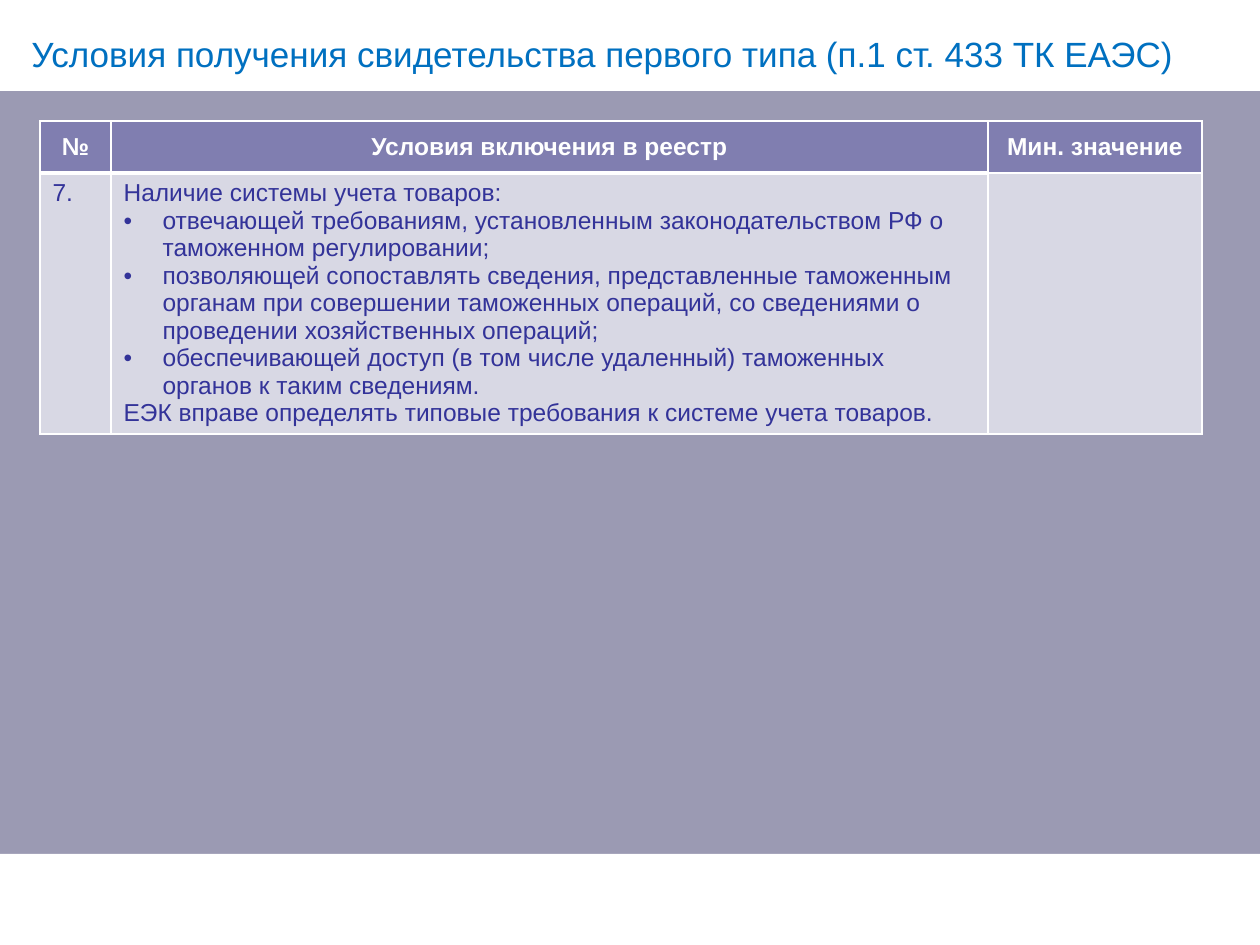
from lxml import etree
from pptx import Presentation
from pptx import util as u
from pptx.dml.color import RGBColor
from pptx.enum import shapes, text
from pptx.oxml import ns

PX = 914400 // 126
SLIDE_W, SLIDE_H = 1260, 945
BAND_H = 91
FONT = "Arial"
WHITE, BACKDROP, TITLE_BLUE = "FFFFFF", "9B9AB3", "0070C0"
HEADER_FILL, BODY_FILL, BODY_INK = "807EB0", "D8D8E4", "333399"

COLUMNS = [71, 877, 214]
ROWS = [52, 261]
HEADINGS = ["№", "Условия включения в реестр", "Мин. значение"]
INTRO = "Наличие системы учета товаров:"
REQUIREMENTS = [
    "отвечающей требованиям, установленным законодательством РФ о таможенном регулировании;",
    "позволяющей сопоставлять сведения, представленные таможенным органам при совершении "
    "таможенных операций, со сведениями о проведении хозяйственных операций;",
    "обеспечивающей доступ (в том числе удаленный) таможенных органов к таким сведениям.",
]
CLOSING = "ЕЭК вправе определять типовые требования к системе учета товаров."


def px(n):
    return u.Emu(n * PX)


def paint(fill, color):
    fill.solid()
    fill.fore_color.rgb = RGBColor.from_string(color)


def style(paragraph, size, color, bold=False):
    font = paragraph.font
    font.name, font.size, font.bold = FONT, u.Pt(size), bold
    font.color.rgb = RGBColor.from_string(color)


def add_bullet(paragraph, indent):
    props = paragraph._p.get_or_add_pPr()
    props.set("marL", str(px(indent)))
    props.set("indent", str(-px(indent)))
    etree.SubElement(props, ns.qn("a:buFont"), typeface=FONT)
    etree.SubElement(props, ns.qn("a:buChar"), char="•")


def set_borders(cell, top=1, bottom=1):
    props = cell._tc.get_or_add_tcPr()
    for side, points in (("L", 1), ("R", 1), ("T", top), ("B", bottom)):
        line = etree.SubElement(props, ns.qn(f"a:ln{side}"), w=str(u.Pt(points)))
        solid = etree.SubElement(line, ns.qn("a:solidFill"))
        etree.SubElement(solid, ns.qn("a:srgbClr"), val=WHITE)


def draw_band(slide, top):
    band = slide.shapes.add_shape(
        shapes.MSO_SHAPE.RECTANGLE, 0, px(top), px(SLIDE_W), px(BAND_H))
    band.shadow.inherit = False
    paint(band.fill, WHITE)
    band.line.fill.background()


def draw_title(slide, left, top, width, height):
    frame = slide.shapes.add_textbox(px(left), px(top), px(width), px(height)).text_frame
    frame.word_wrap = True
    frame.vertical_anchor = text.MSO_ANCHOR.MIDDLE
    title = frame.paragraphs[0]
    title.text = "Условия получения свидетельства первого типа (п.1 ст. 433 ТК ЕАЭС)"
    style(title, 20, TITLE_BLUE)


def draw_conditions(slide, left, top):
    table = slide.shapes.add_table(
        len(ROWS), len(COLUMNS), px(left), px(top), px(sum(COLUMNS)), px(sum(ROWS))).table
    table.first_row = table.horz_banding = False
    for column, width in zip(table.columns, COLUMNS):
        column.width = px(width)
    for row, height in zip(table.rows, ROWS):
        row.height = px(height)

    # Header row, with a thick rule under the first two columns
    for i, heading in enumerate(HEADINGS):
        rule = 3 if i < 2 else 1
        header, body = table.cell(0, i), table.cell(1, i)
        set_borders(header, bottom=rule)
        set_borders(body, top=rule)
        paint(header.fill, HEADER_FILL)
        paint(body.fill, BODY_FILL)
        header.vertical_anchor = text.MSO_ANCHOR.MIDDLE
        label = header.text_frame.paragraphs[0]
        label.text = heading
        label.alignment = text.PP_ALIGN.CENTER
        style(label, 14, WHITE, bold=True)

    # Condition row
    table.cell(1, 0).text = "7."
    condition = table.cell(1, 1).text_frame
    condition.text = "\n".join([INTRO, *REQUIREMENTS, CLOSING])
    for requirement in condition.paragraphs[1:-1]:
        add_bullet(requirement, 39)
    for i in range(len(COLUMNS)):
        for paragraph in table.cell(1, i).text_frame.paragraphs:
            style(paragraph, 14, BODY_INK)


def main():
    deck = Presentation()
    deck.slide_width, deck.slide_height = px(SLIDE_W), px(SLIDE_H)
    slide = deck.slides.add_slide(deck.slide_layouts[6])
    paint(slide.background.fill, BACKDROP)

    for top in (0, SLIDE_H - BAND_H):
        draw_band(slide, top)
    draw_conditions(slide, 40, 121)
    draw_title(slide, 19, 21, 1205, 66)
    deck.save("out.pptx")


if __name__ == "__main__":
    main()
